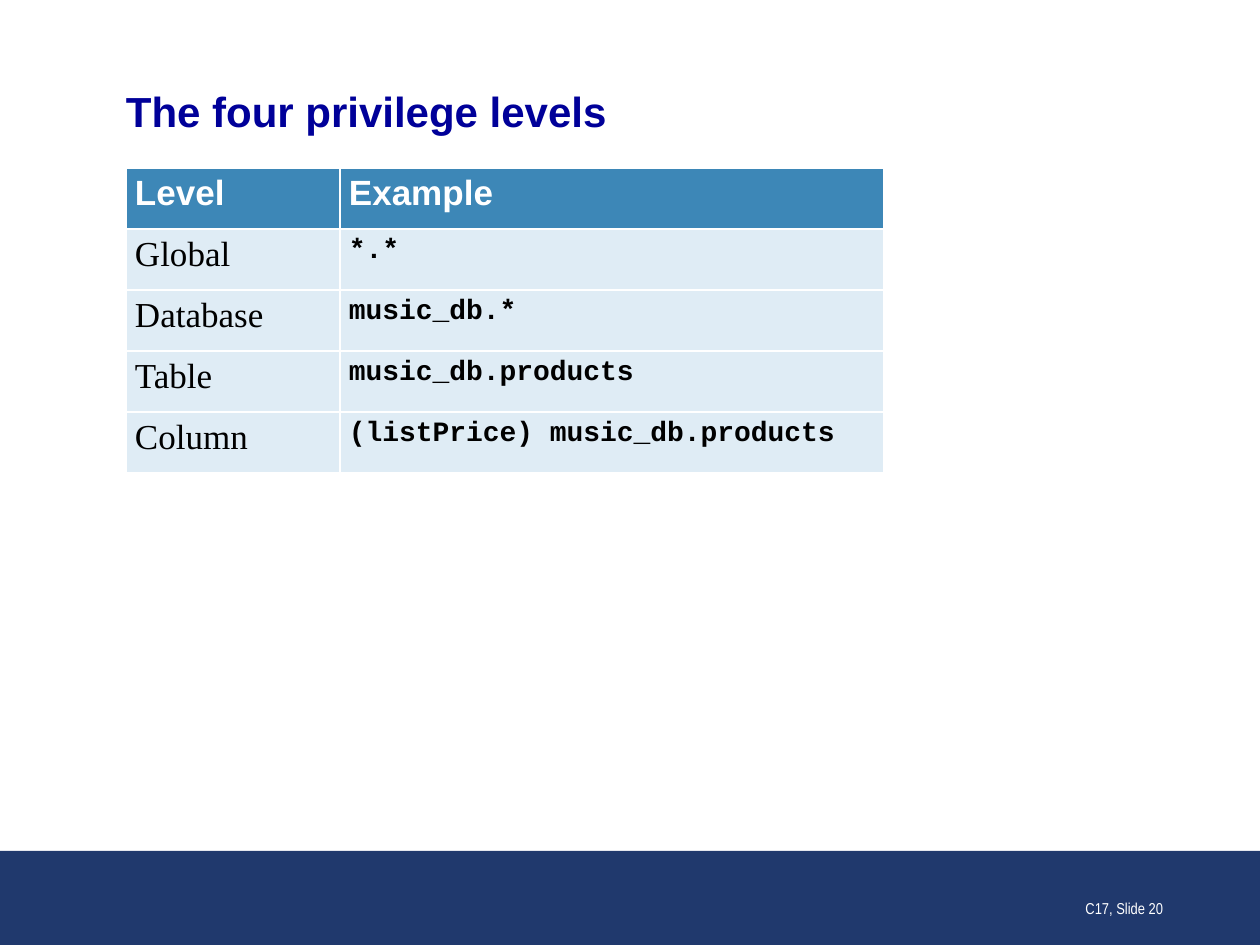
from pptx import Presentation
from pptx.dml.color import RGBColor
from pptx.enum.shapes import MSO_SHAPE
from pptx.enum.text import MSO_ANCHOR, PP_ALIGN
from pptx.util import Emu, Pt

RECTANGLE = MSO_SHAPE.RECTANGLE
TOP, MIDDLE, BOTTOM = MSO_ANCHOR.TOP, MSO_ANCHOR.MIDDLE, MSO_ANCHOR.BOTTOM
LEFT, RIGHT = PP_ALIGN.LEFT, PP_ALIGN.RIGHT

EMU_PER_PX = 914400 / 126
COLORS = {
    "band": "20396D",
    "title": "000099",
    "header": "3D87B7",
    "body": "DFECF5",
    "white": "FFFFFF",
    "black": "000000",
}
FORMATS = {
    "title": ({"name": "Arial", "size": Pt(24), "bold": True}, "title"),
    "header": ({"name": "Arial", "size": Pt(20), "bold": True}, "white"),
    "level": ({"name": "Times New Roman", "size": Pt(20), "bold": False}, "black"),
    "code": ({"name": "Courier New", "size": Pt(16), "bold": True}, "black"),
    "footer": ({"name": "Arial Narrow", "size": Pt(9), "bold": False}, "white"),
}


def px(length):
    return Emu(round(length * EMU_PER_PX))


def color(key):
    return RGBColor.from_string(COLORS[key])


class SlideBuilder:
    def __init__(self, slide):
        self.slide = slide

    def add_styled_run(self, frame, text, style, align=LEFT):
        paragraph = frame.paragraphs[0]
        paragraph.alignment = align
        run = paragraph.add_run()
        run.text = text
        values, text_color = FORMATS[style]
        for attribute, value in values.items():
            setattr(run.font, attribute, value)
        run.font.color.rgb = color(text_color)

    def set_margins(self, target, horizontal, vertical):
        for side in ("left", "right"):
            setattr(target, f"margin_{side}", px(horizontal))
        for side in ("top", "bottom"):
            setattr(target, f"margin_{side}", px(vertical))

    def band(self, left, top, width, height, fill):
        band = self.slide.shapes.add_shape(
            RECTANGLE, px(left), px(top), px(width), px(height))
        band.shadow.inherit = False
        band.fill.solid()
        band.fill.fore_color.rgb = color(fill)
        band.line.fill.background()

    def text(self, box, text, style, anchor, align=LEFT, margins=(0, 0)):
        frame = self.slide.shapes.add_textbox(*map(px, box)).text_frame
        frame.word_wrap = True
        frame.vertical_anchor = anchor
        self.set_margins(frame, *margins)
        self.add_styled_run(frame, text, style, align)

    def table(self, left, top, column_widths, row_height, rows):
        table = self.slide.shapes.add_table(
            len(rows), len(column_widths), px(left), px(top),
            px(sum(column_widths)), px(row_height * len(rows))).table
        table.horz_banding = False
        for column, width in zip(table.columns, column_widths):
            column.width = px(width)
        for row_index, values in enumerate(rows):
            table.rows[row_index].height = px(row_height)
            styles = ("level", "code") if row_index else ("header", "header")
            for column_index, (value, style) in enumerate(zip(values, styles)):
                cell = table.cell(row_index, column_index)
                cell.fill.solid()
                cell.fill.fore_color.rgb = color("body" if row_index else "header")
                cell.vertical_anchor = TOP
                self.set_margins(cell, 9, 6)
                self.add_styled_run(cell.text_frame, value, style)


def main():
    presentation = Presentation()
    presentation.slide_width = px(1260)
    presentation.slide_height = px(945)
    blank = presentation.slide_layouts[6]
    builder = SlideBuilder(presentation.slides.add_slide(blank))

    privilege_levels = [
        ("Level", "Example"),
        ("Global", "*.*"),
        ("Database", "music_db.*"),
        ("Table", "music_db.products"),
        ("Column", "(listPrice) music_db.products"),
    ]
    builder.band(0, 851, 1260, 94, "band")
    builder.text((126, 86, 1008, 50), "The four privilege levels", "title", MIDDLE)
    builder.table(126, 168, (214, 544), 61, privilege_levels)
    builder.text((914, 861, 262, 63), "C17, Slide 20", "footer", BOTTOM, RIGHT, (13, 6))

    presentation.save("out.pptx")


if __name__ == "__main__":
    main()
